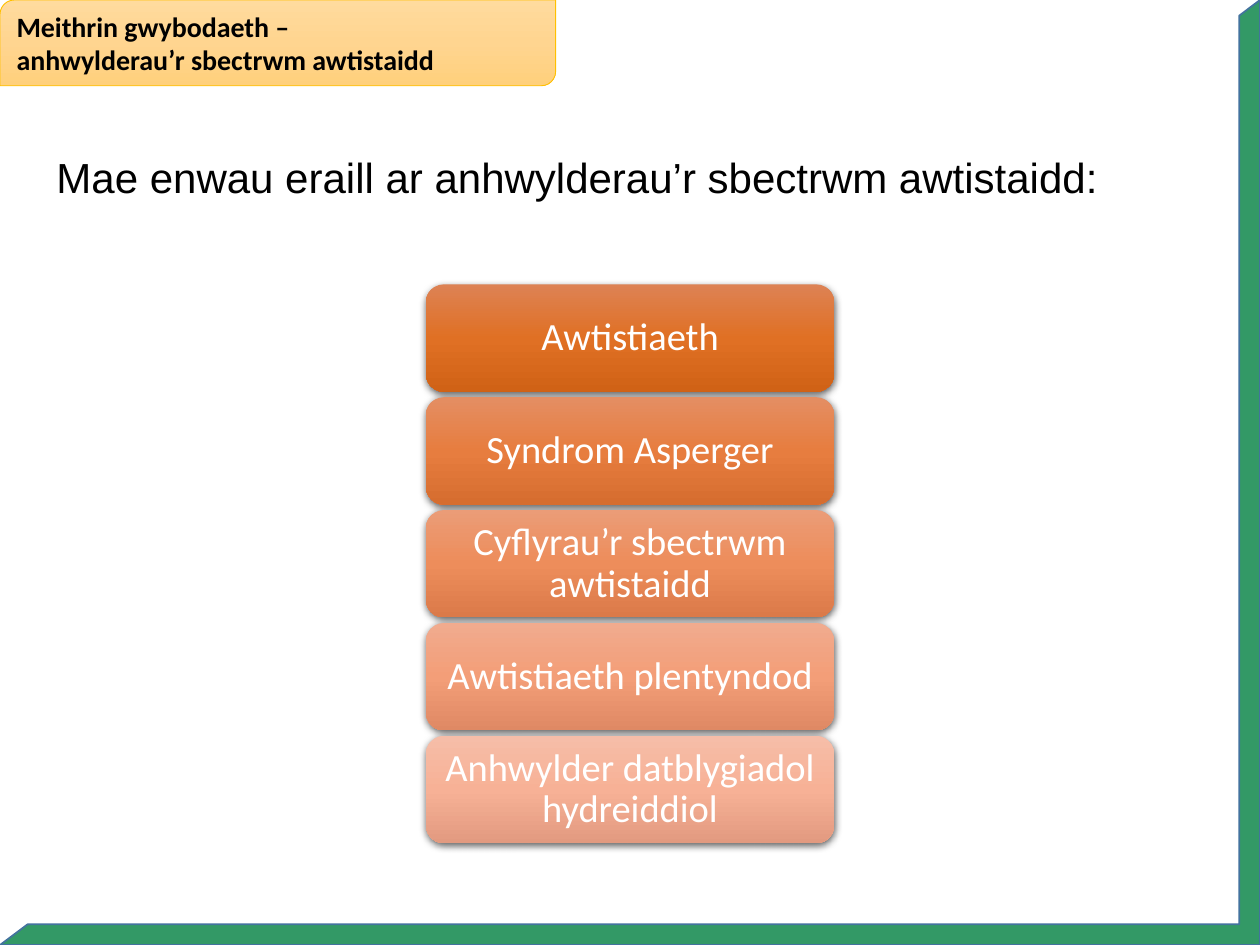
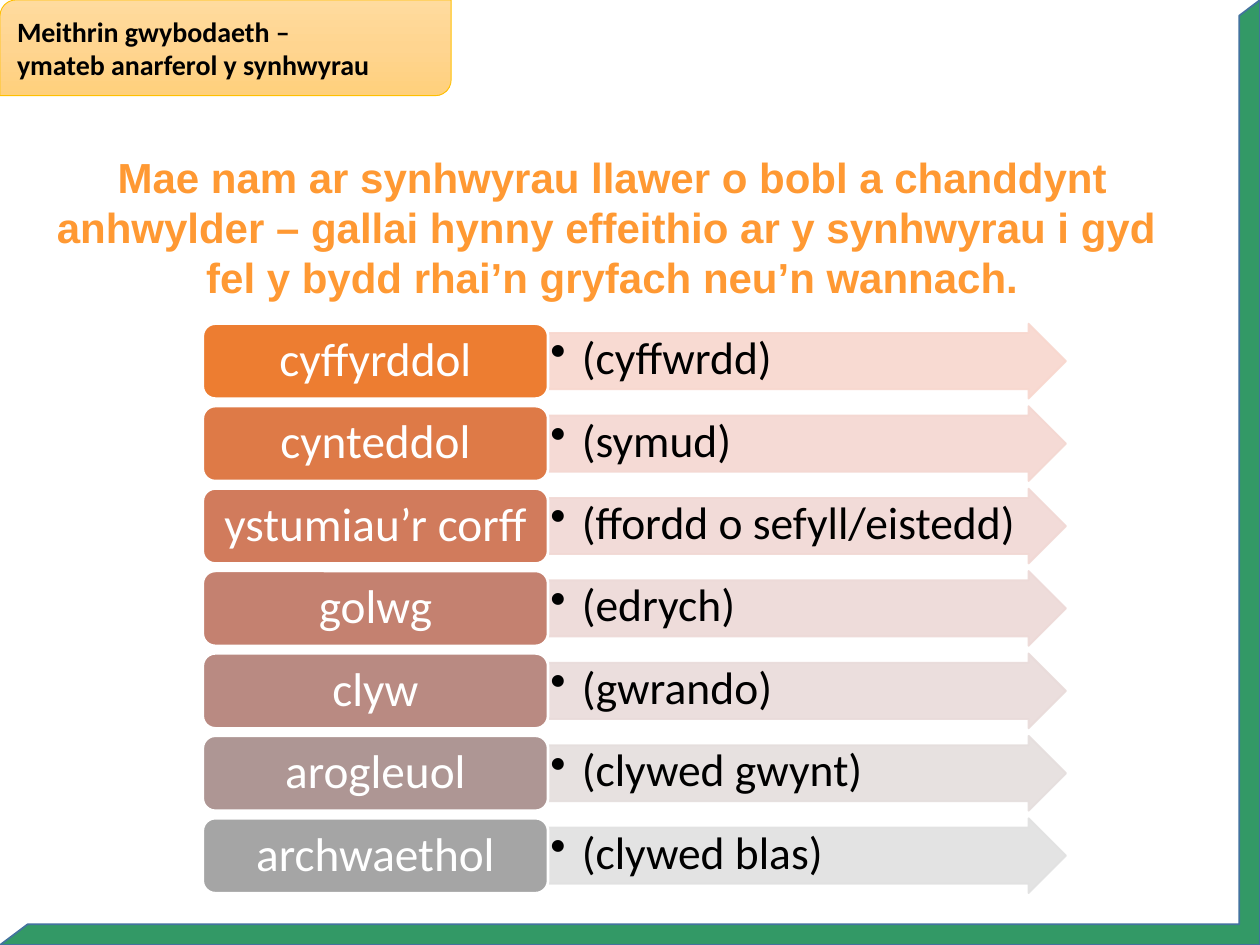
from lxml import etree
from copy import deepcopy
from pptx import Presentation
from pptx import util as u
from pptx.dml.color import RGBColor
from pptx.enum import shapes, text
from pptx.oxml import ns


class Theme:
    heading_font, label_font = "Arial", "Calibri"
    band_size, heading_size, name_size, sense_size, meaning_size = 16, 24, 22, 27, 26
    black, white = "000000", "FFFFFF"
    frame, frame_line = "339966", "43739E"
    band, band_line = ["FFDB9E", "FFD590", "FFD07C"], "FFC000"
    accent = "FF9933"


def add_shape(slide, kind, box, fill, line=None, line_width=1, opacity=100):
    """Add a preset shape; a list of three colours as fill runs from top to bottom."""
    shape = slide.shapes.add_shape(kind, *[u.Pt(length) for length in box])
    shape.shadow.inherit = False
    if isinstance(fill, list):
        shape.fill.gradient()
        shape.fill.gradient_angle = 270
        stop_list = shape._element.spPr.find(".//" + ns.qn("a:gsLst"))
        stop_list.append(deepcopy(stop_list[-1]))
        for stop, color, position in zip(shape.fill.gradient_stops, fill, (0, 0.5, 1)):
            stop.color.rgb = RGBColor.from_string(color)
            stop.position = position
    else:
        shape.fill.solid()
        shape.fill.fore_color.rgb = RGBColor.from_string(fill)
    if line:
        shape.line.color.rgb = RGBColor.from_string(line)
        shape.line.width = u.Pt(line_width)
    else:
        shape.line.fill.background()
    if opacity < 100:
        for color in shape._element.spPr.iter(ns.qn("a:srgbClr")):
            etree.SubElement(color, ns.qn("a:alpha"), val=str(opacity * 1000))
    return shape


def write(shape, lines, font, size, color, bold=False, align=text.PP_ALIGN.LEFT,
          anchor=text.MSO_ANCHOR.MIDDLE, insets=(7.2, 3.6), spacing=None, bullet=False):
    frame = shape.text_frame
    frame.word_wrap = True
    frame.vertical_anchor = anchor
    frame.margin_left = frame.margin_right = u.Pt(insets[0])
    frame.margin_top = frame.margin_bottom = u.Pt(insets[1])
    for index, line in enumerate(lines):
        paragraph = frame.add_paragraph() if index else frame.paragraphs[0]
        paragraph.alignment = align
        if spacing:
            paragraph.line_spacing = spacing
        if bullet:
            properties = paragraph._p.get_or_add_pPr()
            properties.set("marL", str(u.Pt(18)))
            properties.set("indent", str(-u.Pt(18)))
            etree.SubElement(properties, ns.qn("a:buChar"), char="•")
        run = paragraph.add_run()
        run.text = line
        run.font.name, run.font.size, run.font.bold = font, u.Pt(size), bold
        run.font.color.rgb = RGBColor.from_string(color)


presentation = Presentation()
presentation.slide_width, presentation.slide_height = u.Pt(720), u.Pt(540)
preset = shapes.MSO_SHAPE
center = text.PP_ALIGN.CENTER

# Frame, topic band and heading of each slide
openings = [
    ("anhwylderau’r sbectrwm awtistaidd", (317.5, 49), (25.2, 82.8, 616.3, 36),
     ["Mae enwau eraill ar anhwylderau’r sbectrwm awtistaidd:"],
     Theme.black, False, text.PP_ALIGN.LEFT),
    ("ymateb anarferol y synhwyrau", (257.8, 54.7), (22.3, 82.8, 655.2, 94.3),
     ["Mae nam ar synhwyrau llawer o bobl a chanddynt",
      "anhwylder – gallai hynny effeithio ar y synhwyrau i gyd ",
      "fel y bydd rhai’n gryfach neu’n wannach."],
     Theme.accent, True, center),
]
for topic, band_size, heading_box, heading_lines, color, bold, align in openings:
    slide = presentation.slides.add_slide(presentation.slide_layouts[6])
    frame = add_shape(slide, preset.HALF_FRAME, (0, 0, 720, 540),
                      Theme.frame, Theme.frame_line)
    frame.rotation = 180
    frame.adjustments[0] = frame.adjustments[1] = 0.022

    band = add_shape(slide, preset.ROUND_2_DIAG_RECTANGLE, (0, 0, *band_size),
                     Theme.band, Theme.band_line, 0.5)
    write(band, ["Meithrin gwybodaeth –", topic], Theme.label_font, Theme.band_size,
          Theme.black, bold=True)

    heading = slide.shapes.add_textbox(*[u.Pt(length) for length in heading_box])
    write(heading, heading_lines, Theme.heading_font, Theme.heading_size, color, bold,
          align, text.MSO_ANCHOR.TOP)
    heading.text_frame.word_wrap = False
    heading.text_frame.auto_size = text.MSO_AUTO_SIZE.SHAPE_TO_FIT_TEXT

names_slide, senses_slide = presentation.slides

# Slide 1: stack of other names
other_names = [
    ("Awtistiaeth", ["DD8254", "E07024", "D06216"]),
    ("Syndrom Asperger", ["E48E63", "E77D3F", "D66D2F"]),
    ("Cyflyrau’r sbectrwm awtistaidd", ["EB9C77", "ED8D5B", "DB7A49"]),
    ("Awtistiaeth plentyndod", ["F1AB8E", "F39E78", "DF8964"]),
    ("Anhwylder datblygiadol hydreiddiol", ["F6BDA8", "F7B196", "E29A80"]),
]
for row, (name, colors) in enumerate(other_names):
    tile = add_shape(names_slide, preset.ROUNDED_RECTANGLE,
                     (243.4, 162.5 + 64.5 * row, 233.3, 61.4), colors)
    effects = tile._element.spPr.find(ns.qn("a:effectLst"))
    shadow = etree.SubElement(effects, ns.qn("a:outerShdw"), blurRad=str(u.Pt(4.5)),
                              dist=str(u.Pt(1.5)), dir="5400000", rotWithShape="0")
    shadow_color = etree.SubElement(shadow, ns.qn("a:srgbClr"), val=Theme.black)
    etree.SubElement(shadow_color, ns.qn("a:alpha"), val="63000")
    write(tile, [name], Theme.label_font, Theme.name_size, Theme.white,
          align=center, insets=(6.6, 3.3), spacing=0.9)

# Slide 2: senses, each with an arrow that explains it
senses = [
    ("cyffyrddol", "(cyffwrdd)", "ED7D31", "F8D7CE"),
    ("cynteddol", "(symud)", "DE7A47", "F4D7D1"),
    ("ystumiau’r corff", "(ffordd o sefyll/eistedd)", "D17B5C", "F1D8D4"),
    ("golwg", "(edrych)", "C48170", "EDD9D7"),
    ("clyw", "(gwrando)", "B98A82", "E9DBDA"),
    ("arogleuol", "(clywed gwynt)", "AE9694", "E5DEDD"),
    ("archwaethol", "(clywed blas)", "A5A5A5", "E1E1E1"),
]
row_height = 42.8
for row, (sense, meaning, tile_color, arrow_color) in enumerate(senses):
    top = 185 + 47.1 * row
    arrow = add_shape(senses_slide, preset.RIGHT_ARROW, (313.2, top, 296, row_height),
                      arrow_color, arrow_color, opacity=90)
    arrow.adjustments[0], arrow.adjustments[1] = 0.75, 0.5
    write(arrow, [meaning], Theme.label_font, Theme.meaning_size, Theme.black,
          anchor=text.MSO_ANCHOR.TOP, insets=(1.3, 1.3), spacing=0.9, bullet=True)

    tile = add_shape(senses_slide, preset.ROUNDED_RECTANGLE,
                     (115.9, top, 197.3, row_height), tile_color, Theme.white, 1.5)
    write(tile, [sense], Theme.label_font, Theme.sense_size, Theme.white,
          align=center, insets=(8.1, 4.1), spacing=0.9)

presentation.save("out.pptx")
